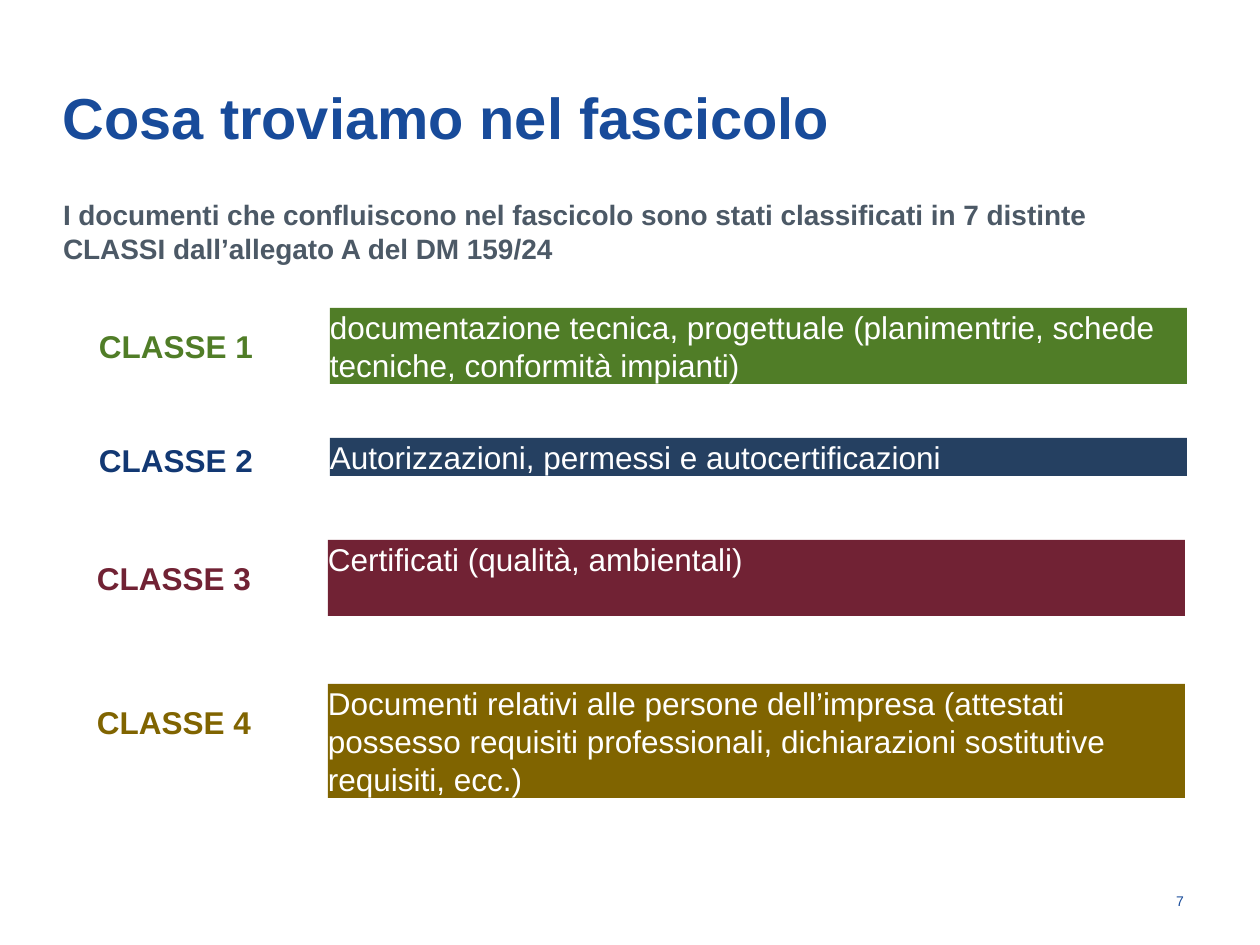
from dataclasses import dataclass

from pptx import Presentation
from pptx.dml.color import RGBColor
from pptx.enum.shapes import MSO_SHAPE
from pptx.enum.text import MSO_ANCHOR, PP_ALIGN
from pptx.shapes.autoshape import Shape
from pptx.slide import Slide
from pptx.util import Emu, Pt

EMU_PER_INCH = 914400
PX_PER_INCH = 126
FONT = "Arial"

RECTANGLE = MSO_SHAPE.RECTANGLE
TOP, MIDDLE = MSO_ANCHOR.TOP, MSO_ANCHOR.MIDDLE
LEFT, RIGHT = PP_ALIGN.LEFT, PP_ALIGN.RIGHT

BLUE = RGBColor(0x18, 0x4B, 0x9A)
GREY = RGBColor(0x4C, 0x59, 0x66)
WHITE = RGBColor(0xFF, 0xFF, 0xFF)
GREEN = RGBColor(0x50, 0x7D, 0x27)
DARK_BLUE = RGBColor(0x12, 0x38, 0x73)
NAVY = RGBColor(0x25, 0x40, 0x61)
BURGUNDY = RGBColor(0x71, 0x22, 0x34)
OCHRE = RGBColor(0x80, 0x64, 0x00)

LABEL_WIDTH = 265
BAR_OFFSET = 231
BAR_WIDTH = 857
LINE_HEIGHT = 38


@dataclass(frozen=True)
class Box:
    left: int
    top: int
    width: int
    height: int


@dataclass(frozen=True)
class TextStyle:
    size: int
    color: RGBColor
    bold: bool = False
    align: PP_ALIGN = LEFT
    anchor: MSO_ANCHOR = TOP


@dataclass(frozen=True)
class DocumentClass:
    label: str
    description: str
    left: int
    label_top: int
    bar_top: int
    bar_lines: int
    label_color: RGBColor
    bar_color: RGBColor


CLASSES = [
    DocumentClass(
        "CLASSE 1",
        "documentazione tecnica, progettuale (planimentrie, schede tecniche, conformità impianti)",
        99, 327, 308, 2, GREEN, GREEN),
    DocumentClass(
        "CLASSE 2", "Autorizzazioni, permessi e autocertificazioni",
        99, 441, 438, 1, DARK_BLUE, NAVY),
    DocumentClass(
        "CLASSE 3", "Certificati (qualità, ambientali)",
        97, 559, 540, 2, BURGUNDY, BURGUNDY),
    DocumentClass(
        "CLASSE 4",
        "Documenti relativi alle persone dell’impresa (attestati possesso requisiti "
        "professionali, dichiarazioni sostitutive requisiti, ecc.)",
        97, 703, 684, 3, OCHRE, OCHRE),
]


def px(length: int) -> Emu:
    return Emu(round(length * EMU_PER_INCH / PX_PER_INCH))


def placement(box: Box) -> tuple[Emu, Emu, Emu, Emu]:
    return px(box.left), px(box.top), px(box.width), px(box.height)


def write_text(shape: Shape, text: str, style: TextStyle, right_inset: int = 0) -> None:
    frame = shape.text_frame
    frame.word_wrap = True
    frame.vertical_anchor = style.anchor
    frame.margin_left = frame.margin_top = frame.margin_bottom = 0
    frame.margin_right = px(right_inset)
    paragraph = frame.paragraphs[0]
    paragraph.alignment = style.align
    run = paragraph.add_run()
    run.text = text
    run.font.name = FONT
    run.font.size = Pt(style.size)
    run.font.bold = style.bold
    run.font.color.rgb = style.color


def add_text(slide: Slide, box: Box, text: str, style: TextStyle, right_inset: int = 0) -> None:
    write_text(slide.shapes.add_textbox(*placement(box)), text, style, right_inset)


def add_bar(slide: Slide, box: Box, text: str, fill: RGBColor) -> None:
    bar = slide.shapes.add_shape(RECTANGLE, *placement(box))
    bar.shadow.inherit = False
    bar.fill.solid()
    bar.fill.fore_color.rgb = fill
    bar.line.fill.background()
    write_text(bar, text, TextStyle(18, WHITE))


def add_document_class(slide: Slide, item: DocumentClass) -> None:
    add_text(slide, Box(item.left, item.label_top, LABEL_WIDTH, LINE_HEIGHT),
             item.label, TextStyle(18, item.label_color, bold=True))
    add_bar(slide, Box(item.left + BAR_OFFSET, item.bar_top, BAR_WIDTH,
                       item.bar_lines * LINE_HEIGHT),
            item.description, item.bar_color)


def main() -> None:
    presentation = Presentation()
    presentation.slide_width = px(1260)
    presentation.slide_height = px(945)
    slide = presentation.slides.add_slide(presentation.slide_layouts[6])

    add_text(slide, Box(63, 38, 1134, 157), "Cosa troviamo nel fascicolo",
             TextStyle(33, BLUE, bold=True, anchor=MIDDLE), right_inset=13)
    add_text(slide, Box(1106, 876, 91, 50), "7",
             TextStyle(8, BLUE, align=RIGHT, anchor=MIDDLE), right_inset=13)
    add_text(slide, Box(63, 198, 1113, 146),
             "I documenti che confluiscono nel fascicolo sono stati classificati in 7 distinte "
             "CLASSI dall’allegato A del DM 159/24",
             TextStyle(16, GREY, bold=True))
    for item in CLASSES:
        add_document_class(slide, item)

    presentation.save("out.pptx")


if __name__ == "__main__":
    main()
